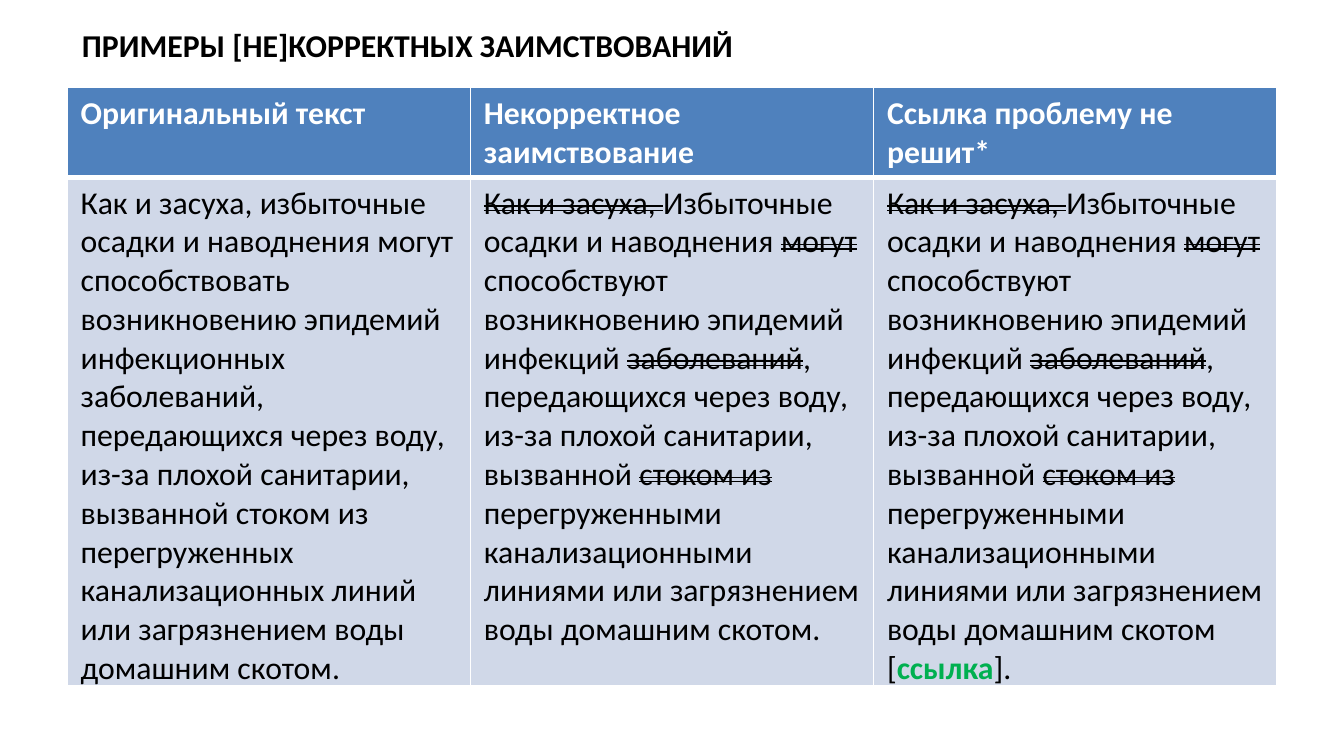
"""Build a slide comparing an original text with two improper borrowings."""
from dataclasses import dataclass

from lxml.etree import SubElement
from pptx import Presentation
from pptx.dml.color import RGBColor
from pptx.enum.text import MSO_ANCHOR, MSO_AUTO_SIZE, PP_ALIGN
from pptx.oxml.ns import qn
from pptx.util import Inches, Pt

FONT = "Calibri"
TEXT_SIZE = 17
WHITE, BLACK, GREEN = "FFFFFF", "000000", "00B050"
HEADER_FILL, BODY_FILL = "4F81BD", "D0D8E8"
SLIDE_WIDTH = 10
SLIDE_HEIGHT = SLIDE_WIDTH * 9 / 16
COLUMN_WIDTH = 3
ROW_HEIGHT = 0.41
TABLE_HEIGHT = 4.45


@dataclass(frozen=True)
class Span:
    text: str
    color: str = BLACK
    bold: bool = False
    strike: bool = False


@dataclass(frozen=True)
class Column:
    heading: str
    body: tuple[Span, ...]


BORROWED = (
    Span("Как и засуха, ", strike=True),
    Span("Избыточные осадки и наводнения "),
    Span("могут", strike=True),
    Span(" способствуют возникновению эпидемий инфекций "),
    Span("заболеваний", strike=True),
    Span(", передающихся через воду, из-за плохой санитарии, вызванной "),
    Span("стоком из ", strike=True),
)
BORROWED_END = "перегруженными канализационными линиями или загрязнением воды домашним скотом"

COLUMNS = (
    Column("Оригинальный текст", (Span(
        "Как и засуха, избыточные осадки и наводнения могут способствовать "
        "возникновению эпидемий инфекционных заболеваний, передающихся через воду, "
        "из-за плохой санитарии, вызванной стоком из перегруженных канализационных "
        "линий или загрязнением воды домашним скотом."),)),
    Column("Некорректное заимствование", BORROWED + (Span(BORROWED_END + "."),)),
    Column("Ссылка проблему не решит*", BORROWED + (
        Span(BORROWED_END + " ["), Span("ссылка", GREEN, bold=True), Span("]."))),
)


def rgb(color: str) -> RGBColor:
    return RGBColor.from_string(color)


def write_spans(paragraph, spans: tuple[Span, ...]) -> None:
    for span in spans:
        run = paragraph.add_run()
        run.text = span.text
        run.font.name = FONT
        run.font.size = Pt(TEXT_SIZE)
        run.font.bold = span.bold
        run.font.color.rgb = rgb(span.color)
        if span.strike:
            run.font._element.set("strike", "dblStrike")


def add_border(cell, side: str, width: float) -> None:
    line = SubElement(cell._tc.get_or_add_tcPr(), qn(f"a:ln{side}"), w=str(Pt(width)))
    fill = SubElement(line, qn("a:solidFill"))
    SubElement(fill, qn("a:srgbClr"), val=WHITE)


def fill_cell(cell, spans: tuple[Span, ...], fill: str, borders: dict[str, float]) -> None:
    for side, width in borders.items():
        add_border(cell, side, width)
    cell.fill.solid()
    cell.fill.fore_color.rgb = rgb(fill)
    write_spans(cell.text_frame.paragraphs[0], spans)


def add_title(slide, text: str) -> None:
    title = slide.shapes.title
    title.left, title.top = Inches(0.51), Inches(0.14)
    title.width, title.height = Inches(9.13), Inches(0.39)
    frame = title.text_frame
    frame.word_wrap = True
    frame.auto_size = MSO_AUTO_SIZE.SHAPE_TO_FIT_TEXT
    frame.vertical_anchor = MSO_ANCHOR.TOP
    paragraph = frame.paragraphs[0]
    paragraph.alignment = PP_ALIGN.LEFT
    write_spans(paragraph, (Span(text, bold=True),))


def add_comparison(slide, columns: tuple[Column, ...]) -> None:
    frame = slide.shapes.add_table(
        2, len(columns), Inches(0.5), Inches(0.65),
        Inches(COLUMN_WIDTH * len(columns)), Inches(TABLE_HEIGHT))
    table = frame.table
    for row in table.rows:
        row.height = Inches(ROW_HEIGHT)
    for index, column in enumerate(columns):
        table.columns[index].width = Inches(COLUMN_WIDTH)
        heading = (Span(column.heading, WHITE, bold=True),)
        fill_cell(table.cell(0, index), heading, HEADER_FILL, {"L": 1, "R": 1, "T": 1, "B": 3})
        fill_cell(table.cell(1, index), column.body, BODY_FILL, {"L": 1, "R": 1, "T": 3, "B": 1})
    frame.height = Inches(TABLE_HEIGHT)


def main() -> None:
    deck = Presentation()
    deck.slide_width, deck.slide_height = Inches(SLIDE_WIDTH), Inches(SLIDE_HEIGHT)
    slide = deck.slides.add_slide(deck.slide_layouts[5])
    add_title(slide, "ПРИМЕРЫ [НЕ]КОРРЕКТНЫХ ЗАИМСТВОВАНИЙ")
    add_comparison(slide, COLUMNS)
    deck.save("out.pptx")


if __name__ == "__main__":
    main()
